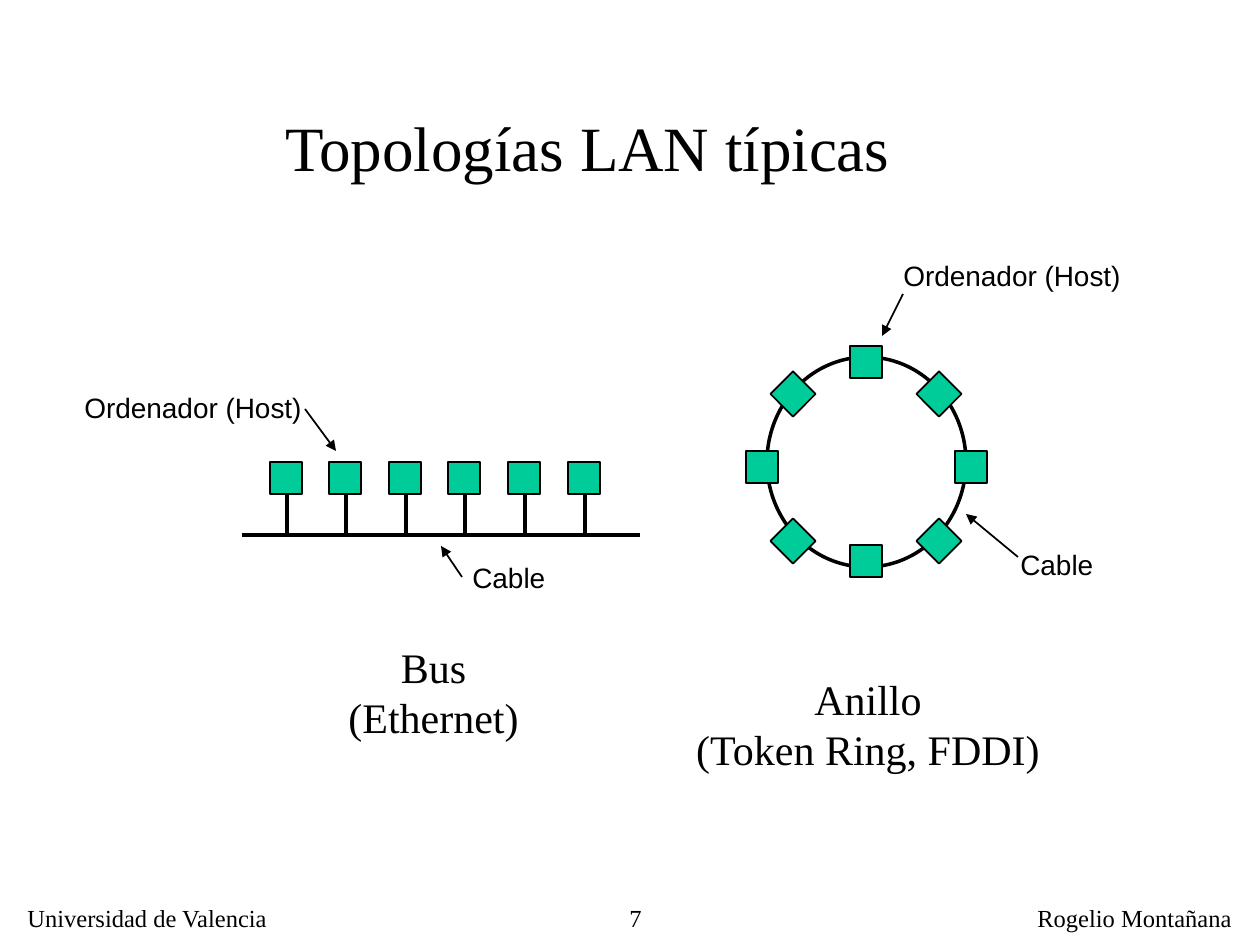
"""Build a slide comparing the bus and ring LAN topologies."""
from dataclasses import dataclass
from itertools import product

from lxml import etree
from pptx import Presentation, util as u
from pptx.dml.color import RGBColor
from pptx.enum import shapes, text
from pptx.oxml import ns

PX = u.Inches(1) / 126
COLORS = {"ink": "000000", "host": "00CC99"}
SERIF, SANS = "Times New Roman", "Arial"
LEFT, CENTER, RIGHT = text.PP_ALIGN.LEFT, text.PP_ALIGN.CENTER, text.PP_ALIGN.RIGHT
HOST_SIZE = 32


@dataclass
class Label:
    wording: str
    left: int
    top: int
    width: int
    height: int
    size: int
    font: str = SERIF
    align: text.PP_ALIGN = LEFT


@dataclass
class Line:
    x1: int
    y1: int
    x2: int
    y2: int
    weight: int = 2
    arrow: bool = False


@dataclass
class Host:
    x: int
    y: int
    turn: int = 0


LABELS = [
    Label("Universidad de Valencia", 15, 897, 268, 42, 14),
    Label("Rogelio Montañana", 1025, 897, 226, 42, 14),
    Label("7", 520, 897, 134, 39, 14, align=RIGHT),
    Label("Topologías LAN típicas", 273, 102, 634, 88, 36),
    Label("Bus\n(Ethernet)", 336, 635, 195, 113, 24, align=CENTER),
    Label("Anillo\n(Token Ring, FDDI)", 682, 667, 372, 113, 24, align=CENTER),
    Label("Cable", 460, 554, 98, 47, 16, SANS),
    Label("Ordenador (Host)", 72, 384, 243, 47, 16, SANS),
    Label("Ordenador (Host)", 891, 252, 243, 47, 16, SANS),
    Label("Cable", 1008, 541, 98, 47, 16, SANS),
]
ARROWS = [
    Line(462, 577, 441, 546, 1, True),
    Line(305, 409, 336, 451, 1, True),
    Line(1018, 557, 966, 514, 1, True),
    Line(903, 294, 882, 336, 1, True),
]
BUS_XS = [286 + 298 * i // 5 for i in range(6)]
BUS_LINES = [Line(242, 535, 640, 535)] + [Line(x + 1, 494, x + 1, 535) for x in BUS_XS]
BUS_HOSTS = [Host(x, 478) for x in BUS_XS]
RING_HOSTS = [Host(x, y, 45) for x, y in product((793, 939), (394, 541))]
RING_HOSTS += [Host(866, 362), Host(971, 467), Host(866, 561), Host(762, 467)]


def emu(px: float) -> int:
    return round(px * PX)


def color(name: str) -> RGBColor:
    return RGBColor.from_string(COLORS[name])


def draw_label(page, label: Label) -> None:
    box = page.shapes.add_textbox(*map(emu, (label.left, label.top, label.width, label.height)))
    frame = box.text_frame
    frame.word_wrap = False
    frame.text = label.wording
    for para in frame.paragraphs:
        para.alignment = label.align
        para.font.name = label.font
        para.font.size = u.Pt(label.size)
        para.font.color.rgb = color("ink")


def draw_line(page, line: Line) -> None:
    ends = map(emu, (line.x1, line.y1, line.x2, line.y2))
    connector = page.shapes.add_connector(shapes.MSO_CONNECTOR.STRAIGHT, *ends)
    connector.line.color.rgb = color("ink")
    connector.line.width = u.Pt(line.weight)
    if line.arrow:
        etree.SubElement(connector.line._get_or_add_ln(), ns.qn("a:tailEnd"), type="triangle")
    etree.SubElement(connector._element.spPr, ns.qn("a:effectLst"))


def draw_outlined(page, kind, left: float, top: float, width: int, height: int, weight: int):
    shape = page.shapes.add_shape(kind, *map(emu, (left, top, width, height)))
    shape.shadow.inherit = False
    shape.fill.background()
    shape.line.color.rgb = color("ink")
    shape.line.width = u.Pt(weight)
    return shape


def draw_host(page, host: Host) -> None:
    half = HOST_SIZE // 2
    square = draw_outlined(page, shapes.MSO_SHAPE.RECTANGLE, host.x - half, host.y - half,
                           HOST_SIZE, HOST_SIZE, 1)
    square.fill.solid()
    square.fill.fore_color.rgb = color("host")
    square.rotation = host.turn


def main() -> None:
    deck = Presentation()
    deck.slide_width, deck.slide_height = u.Inches(10), u.Inches(7.5)
    page = deck.slides.add_slide(deck.slide_layouts[6])
    for label in LABELS:
        draw_label(page, label)
    for line in BUS_LINES:
        draw_line(page, line)
    draw_outlined(page, shapes.MSO_SHAPE.OVAL, 767, 357, 199, 210, 2)
    for host in BUS_HOSTS + RING_HOSTS:
        draw_host(page, host)
    for arrow in ARROWS:
        draw_line(page, arrow)
    deck.save("out.pptx")


if __name__ == "__main__":
    main()
